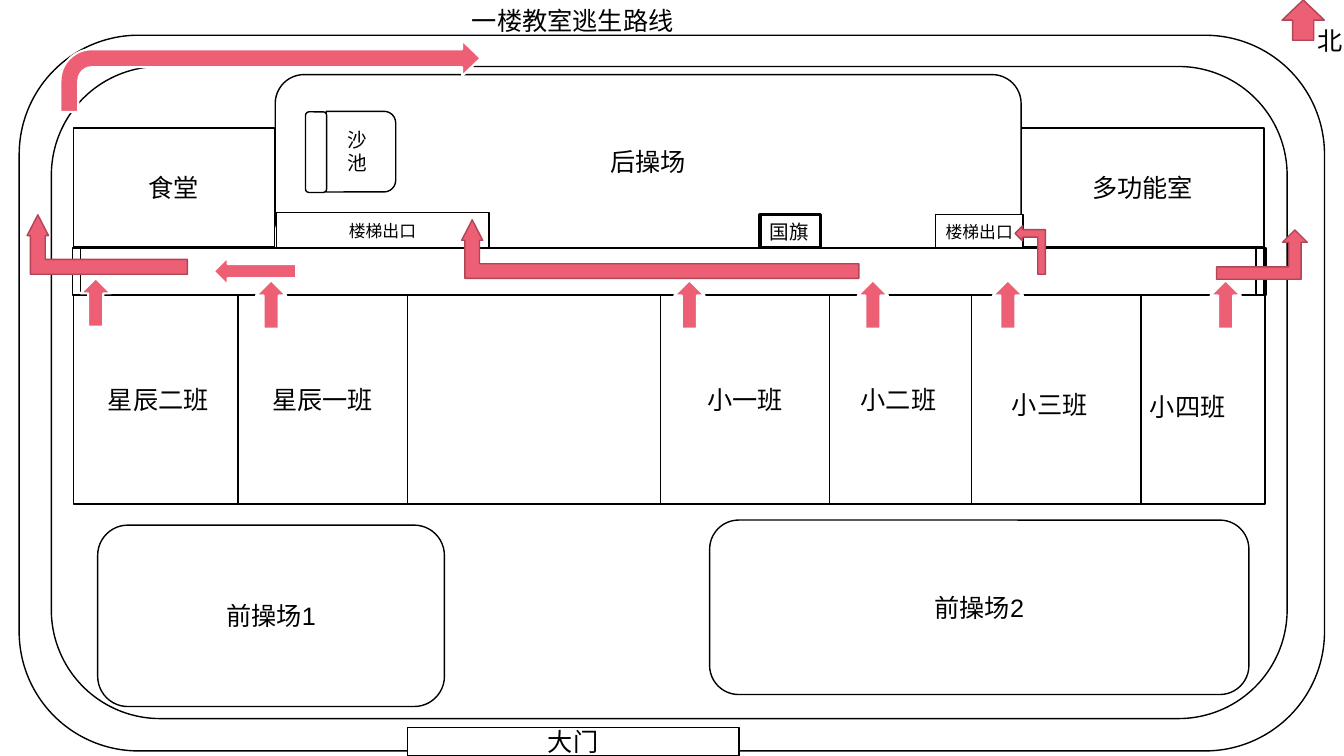
from pptx import Presentation
from pptx.dml.color import RGBColor
from pptx.enum.shapes import MSO_SHAPE
from pptx.enum.text import MSO_ANCHOR, MSO_AUTO_SIZE, PP_ALIGN
from pptx.util import Pt

BLACK = RGBColor(0, 0, 0)
WHITE = RGBColor(255, 255, 255)
ROSE = RGBColor(0xEC, 0x5F, 0x74)
DARK_ROSE = RGBColor(0xAF, 0x46, 0x56)
RECT = MSO_SHAPE.RECTANGLE
ROUND = MSO_SHAPE.ROUNDED_RECTANGLE
UP = MSO_SHAPE.UP_ARROW
BENT_UP = MSO_SHAPE.BENT_UP_ARROW

CENTRED = dict(vertical_anchor=MSO_ANCHOR.MIDDLE, margin_left=0, margin_right=0,
               margin_top=0, margin_bottom=0)
TOP = dict(vertical_anchor=MSO_ANCHOR.TOP, auto_size=MSO_AUTO_SIZE.NONE,
           margin_left=Pt(7.2), margin_right=0, margin_top=Pt(3.6), margin_bottom=Pt(3.6))


def apply(target, values):
    for name, value in values.items():
        setattr(target, name, value)


def place(box, x, y, w, h):
    return Pt(box[0] + x), Pt(box[1] + y), Pt(w), Pt(h)


def write(sp, text, size, align, frame, wrap=True):
    tf = sp.text_frame
    apply(tf, dict(frame, word_wrap=wrap))
    p = tf.paragraphs[0]
    p.alignment = align
    r = p.add_run()
    r.text = text
    apply(r.font, dict(name="Arial", size=Pt(size), bold=False))
    r.font.color.rgb = BLACK


def add_area(s, box, part, text="", size=18, kind=RECT, fill=WHITE, line=BLACK, width=1):
    sp = s.shapes.add_shape(kind, *place(box, *part))
    sp.shadow.inherit = False
    sp.fill.solid()
    sp.fill.fore_color.rgb = fill
    sp.line.color.rgb = line
    sp.line.width = Pt(width)
    if text:
        write(sp, text, size, PP_ALIGN.CENTER, CENTRED)
    return sp


def add_label(s, box, part, text, size=18, align=PP_ALIGN.LEFT, wrap=True):
    sp = s.shapes.add_textbox(*place(box, *part))
    write(sp, text, size, align, TOP, wrap)


def add_arrow(s, box, part, kind, adjustments=(), line=DARK_ROSE, width=1,
              rotation=0, mirrored=False):
    sp = add_area(s, box, part, kind=kind, fill=ROSE, line=line, width=width)
    for i, value in enumerate(adjustments):
        sp.adjustments[i] = value
    sp.rotation = rotation
    if mirrored:
        sp.element.spPr.get_or_add_xfrm().set("flipH", "1")


def add_title(s, box):
    sp = s.shapes.title
    apply(sp, dict(zip(("left", "top", "width", "height"), place(box, 0, 0, *box[2:]))))
    write(sp, "一楼教室逃生路线", 18, PP_ALIGN.JUSTIFY, TOP)


def add_campus(s, box):
    _, _, w, h = box
    add_area(s, box, (0, 0, w, h), kind=ROUND)
    add_area(s, box, (23, 22.3, w - 49.7, h - 45.4), kind=ROUND)
    add_area(s, box, (56.1, 349.9, 247.7, 129.6), "前操场1", kind=ROUND)
    add_area(s, box, (493.2, 346.3, 385.2, 124.6), "前操场2", kind=ROUND)
    add_area(s, box, (277.2, h - 16.6, 236.9, 20.2), "大门")


def add_north_block(s, box):
    _, _, w, h = box
    add_area(s, box, (0, 38.1, 143.3, 85), "食堂")
    add_area(s, box, (w - 173.5, 38.1, 173.5, 85), "多功能室")
    add_area(s, box, (144, 0, 532.8, h), "后操场", kind=ROUND)
    add_area(s, box, (490.3, 100.1, 43.2, 23.8), width=2.25)
    add_label(s, box, (490.3, 100.1, 49, 21), "国旗", 14)
    add_area(s, box, (144.7, 98.6, 151.9, 25.2), "楼梯出口", 12)
    add_area(s, box, (615.6, 100.1, 62.6, 23.8), "楼梯出口", 12)
    pit = add_area(s, box, (176.4, 30.2, 57.6, 49.7), kind=MSO_SHAPE.ROUND_2_SAME_RECTANGLE)
    pit.rotation = 90
    add_area(s, box, (165.6, 26.6, 15.1, 57.6), kind=ROUND)
    add_label(s, box, (188.6, 34.5, 28, 41), "沙池", 14)


def add_classrooms(s, box):
    _, _, w, h = box
    hall = 33.8
    add_area(s, box, (0, 0, w, h))
    add_area(s, box, (0.7, 0, w, hall))
    for x, name in ((117.3, "星辰一班"), (419, "小一班"), (641.5, "")):
        add_area(s, box, (x, hall, 121, h - hall), name)
    for x in (-0.7, w - 6.5):
        add_area(s, box, (x, 0, 5.8, hall))
    add_label(s, box, (39.6, 93.6, 34.6, 19.4), "星辰二班", align=PP_ALIGN.CENTER, wrap=False)
    for x, y, name in ((555.1, 93.6, "小二班"), (663.1, 97.2, "小三班"), (761.7, 98.7, "小四班")):
        add_label(s, box, (x, y, 87.8, 28.8), name)


def add_routes(s, box):
    outlined = dict(line=WHITE, width=1.5)
    bend = (0.25, 0.18, 0.35)
    add_arrow(s, box, (0, 124.6, 114.5, 42.5), BENT_UP, bend, mirrored=True)
    add_arrow(s, box, (23.8, 0, 300.2, 51.1), MSO_SHAPE.BENT_ARROW,
              (0.25, 0.25, 0.26, 0.44), **outlined)
    for x, y in ((38.2, 169.9), (163.5, 171.4), (462.3, 171.4),
                 (593.3, 171.4), (689.8, 171.4), (845.3, 171.4)):
        add_arrow(s, box, (x, y, 21.6, 34.6), UP, **outlined)
    add_arrow(s, box, (133.2, 154.8, 59, 20.2), MSO_SHAPE.LEFT_ARROW, **outlined)
    add_arrow(s, box, (310.4, 128.2, 283.7, 41.8), BENT_UP, bend, mirrored=True)
    add_arrow(s, box, (849.6, 135.4, 64.8, 35.3), BENT_UP)
    add_arrow(s, box, (699.2, 139, 34.6, 21.6), BENT_UP, rotation=270)


def add_compass(s, box):
    add_arrow(s, box, (0, 0, 30.2, 28.8), UP)
    add_label(s, box, (18, 14.4, 26.2, 28.8), "北")


def main():
    prs = Presentation()
    apply(prs, dict(slide_width=Pt(960), slide_height=Pt(540)))
    s = prs.slides.add_slide(prs.slide_layouts[5])
    add_title(s, (329.8, 0, 177.8, 28.8))
    add_campus(s, (13.7, 25.2, 932.4, 511.2))
    add_north_block(s, (52.6, 53.3, 850.3, 123.8))
    add_classrooms(s, (52.6, 177.1, 851, 182.9))
    add_routes(s, (19.4, 28.8, 914.4, 177.2))
    add_compass(s, (915.8, 0, 44.2, 43.2))
    prs.save("out.pptx")


if __name__ == "__main__":
    main()
